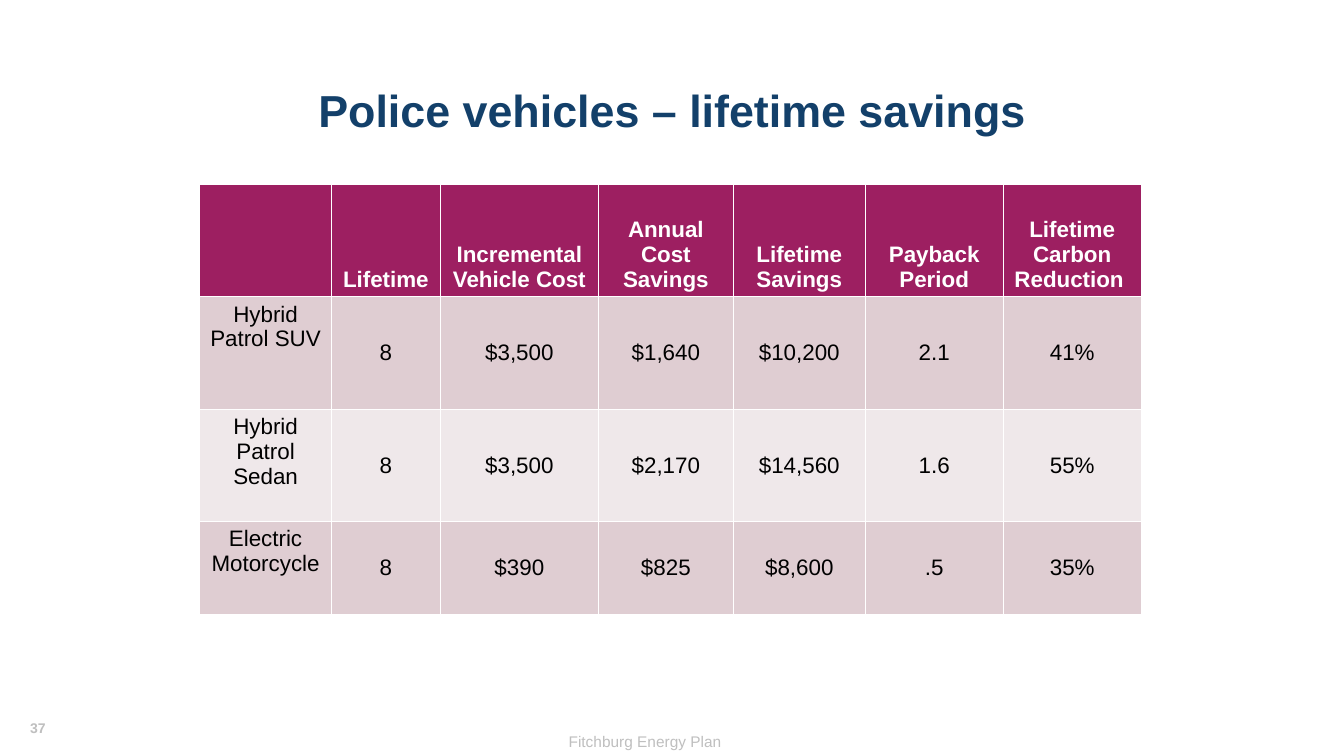
from dataclasses import dataclass

from pptx import Presentation
from pptx import util as u
from pptx.dml.color import RGBColor
from pptx.enum import text

WIDE, HIGH = 13.33, 7.5


@dataclass(frozen=True)
class Theme:
    """Hold the colours, font and type sizes."""
    font: str = "Arial"
    navy: str = "13406A"
    plum: str = "9D1F61"
    bands: tuple = ("DFCDD2", "EFE8EA")
    white: str = "FFFFFF"
    black: str = "000000"
    grey: str = "BFBFBF"
    title: int = 32
    body: int = 16
    foot: int = 11
    page: int = 10


T = Theme()
COLS = (1.31, 1.08, 1.57, 1.34, 1.31, 1.37, 1.37)
ROWS = (1.11, 1.11, 1.11, 0.92)
CELLS = (
    ("", "Lifetime", "Incremental Vehicle Cost", "Annual Cost Savings",
     "Lifetime Savings", "Payback Period", "Lifetime Carbon Reduction "),
    ("Hybrid Patrol SUV", "8", "$3,500", "$1,640", "$10,200", "2.1", "41%"),
    ("Hybrid Patrol Sedan", "8", "$3,500", "$2,170", "$14,560", "1.6", "55%"),
    ("Electric Motorcycle", "8", "$390", "$825", "$8,600", ".5", "35%"),
)


def write(frame, words, size, color, bold=False, align=text.PP_ALIGN.CENTER):
    """Put one styled run in the first paragraph of a frame."""
    para = frame.paragraphs[0]
    para.alignment = align
    run = para.add_run()
    run.text = words
    font = run.font
    font.name, font.size, font.bold = T.font, u.Pt(size), bold
    font.color.rgb = RGBColor.from_string(color)
    return para


def frame(slide, box, wrap=True):
    """Add a text box and give back its frame."""
    area = slide.shapes.add_textbox(*map(u.Inches, box)).text_frame
    area.word_wrap = wrap
    return area


def head(slide, box):
    """Place the slide title in the middle of its box."""
    area = frame(slide, box)
    area.vertical_anchor = text.MSO_ANCHOR.MIDDLE
    para = write(area, "Police vehicles – lifetime savings", T.title, T.navy, True)
    para.line_spacing = 0.9


def foot(slide, box):
    """Place the page number and plan name along a bottom strip."""
    left, top, wide, high = box
    page = frame(slide, (left + 0.015 * wide, top, 0.028 * wide, 0.66 * high), False)
    write(page, "37", T.page, T.grey, True, text.PP_ALIGN.LEFT)
    plan = frame(slide, (left + 0.326 * wide, top + 0.29 * high,
                         0.308 * wide, 0.71 * high))
    write(plan, "Fitchburg Energy Plan", T.foot, T.grey)


def savings(slide, box):
    """Fill a box with the savings table, sized by column and row shares."""
    left, top, wide, high = box
    grid = slide.shapes.add_table(len(ROWS), len(COLS),
                                  *map(u.Inches, box)).table
    for col, part in zip(grid.columns, COLS):
        col.width = u.Inches(wide * part / sum(COLS))
    for row, part in zip(grid.rows, ROWS):
        row.height = u.Inches(high * part / sum(ROWS))
    anchor = text.MSO_ANCHOR
    for r, line in enumerate(CELLS):
        for c, words in enumerate(line):
            cell = grid.cell(r, c)
            cell.fill.solid()
            shade = T.bands[(r - 1) % 2] if r else T.plum
            cell.fill.fore_color.rgb = RGBColor.from_string(shade)
            if r == 0:
                cell.vertical_anchor = anchor.BOTTOM
            else:
                cell.vertical_anchor = anchor.MIDDLE if c else anchor.TOP
            if words:
                color = T.black if r else T.white
                write(cell.text_frame, words, T.body, color, r == 0)


def main():
    """Build and save the slide."""
    deck = Presentation()
    deck.slide_width, deck.slide_height = u.Inches(WIDE), u.Inches(HIGH)
    slide = deck.slides.add_slide(deck.slide_layouts[6])
    foot(slide, (0, 7.09, WIDE, 0.41))
    head(slide, (0.92, 0.4, 11.5, 1.45))
    savings(slide, (1.98, 1.83, 9.34, 4.27))
    deck.save("out.pptx")


if __name__ == "__main__":
    main()
